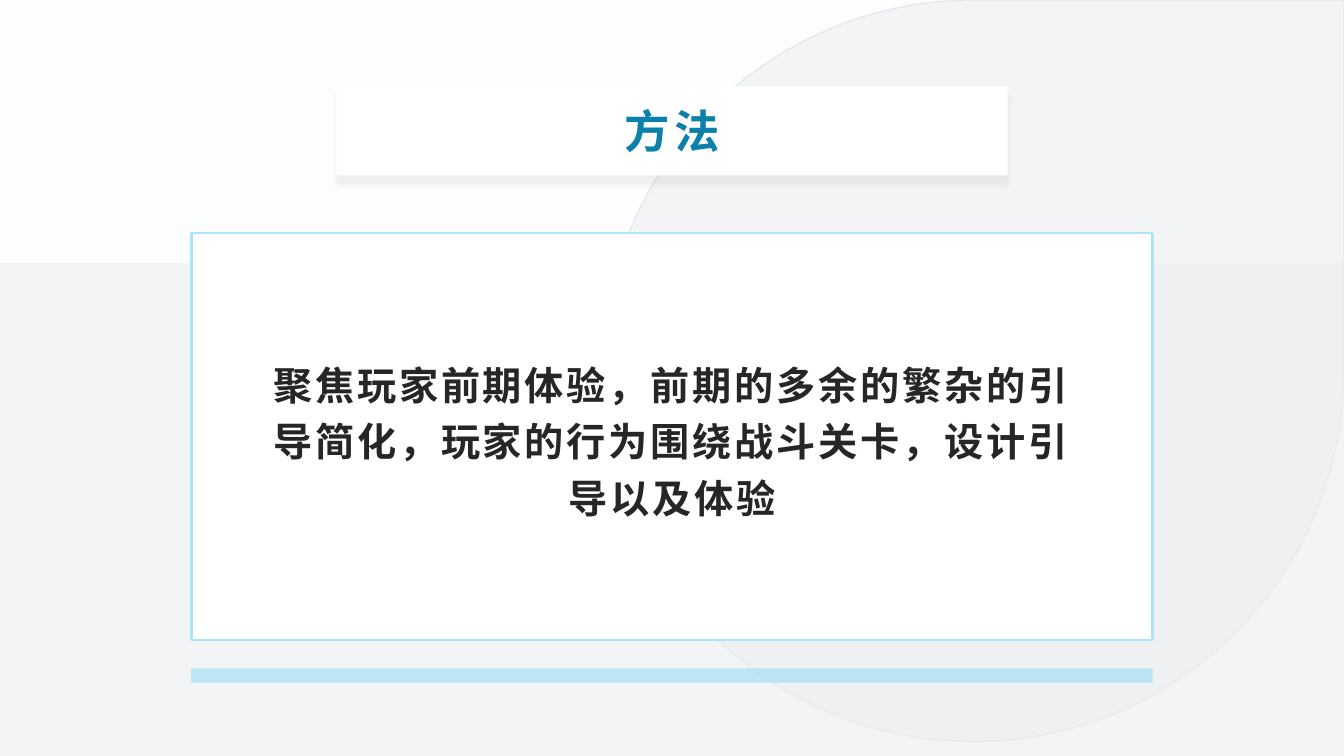
from lxml import etree
from pptx import Presentation
from pptx import util as u
from pptx.dml.color import RGBColor
from pptx.enum import shapes, text
from pptx.oxml.ns import qn

# Content
TITLE = "方法"
BODY = "聚焦玩家前期体验，前期的多余的繁杂的引导简化，玩家的行为围绕战斗关卡，设计引导以及体验"

# Colours and font
PAPER = RGBColor(0xFC, 0xFD, 0xFD)
WHITE = RGBColor(0xFF, 0xFF, 0xFF)
GREY = RGBColor(0xEC, 0xEE, 0xEF)
STEEL = RGBColor(0x57, 0x9D, 0xB6)
SKY = RGBColor(0x76, 0xD4, 0xF6)
PALE = RGBColor(0xAD, 0xE5, 0xFA)
TEAL = RGBColor(0x0B, 0x80, 0xAB)
INK = RGBColor(0x26, 0x26, 0x26)
FONT = "Noto Sans CJK SC"

# Layout in cm; panels and labels are centred across the slide
WIDE, HIGH = 33.87, 19.05
DROP = 18.69
BAND = 6.63
PANEL = 24.23
RECT = shapes.MSO_SHAPE.RECTANGLE
TEAR = shapes.MSO_SHAPE.TEAR


def mid(top, width, height):
    return (WIDE - width) / 2, top, width, height


# Kind, place, fill, fill opacity %, line (colour, points, opacity %), shadow
SHAPES = [
    (TEAR, (WIDE - DROP, 0, DROP, DROP), GREY, 54, (STEEL, 1, 12), False),
    (RECT, (0, BAND, WIDE, HIGH - BAND), GREY, 54, None, False),
    (RECT, mid(16.84, PANEL, 0.36), SKY, 43, None, False),
    (RECT, mid(2.18, 16.92, 2.24), WHITE, 100, None, True),
    (RECT, mid(5.87, PANEL, 10.26), WHITE, 100, (PALE, 2, 100), False),
]

# Text, place, letter spacing in points, font format, paragraph format
LABELS = [
    (TITLE, mid(2.41, 15.75, 1.75), 3,
     {"size": u.Pt(32.4)}, TEAL, {}),
    (BODY, mid(8, 21.31, 5.99), 2,
     {"size": u.Pt(28)}, INK, {"line_spacing": 1.2, "space_after": u.Pt(8)}),
]


def put(item, values):
    for name, value in values.items():
        setattr(item, name, value)


def fade(fill, color, alpha):
    fill.solid()
    fill.fore_color.rgb = color
    if alpha < 100:
        tint = fill._xPr.find(".//" + qn("a:srgbClr"))
        etree.SubElement(tint, qn("a:alpha"), val=str(alpha * 1000))


def shade(shape):
    effects = shape._element.spPr.find(qn("a:effectLst"))
    cast = etree.SubElement(
        effects, qn("a:outerShdw"), blurRad=str(u.Pt(4)),
        dist=str(u.Pt(6)), dir="5400000", algn="t", rotWithShape="0")
    tint = etree.SubElement(cast, qn("a:srgbClr"), val="0D0D0D")
    etree.SubElement(tint, qn("a:alpha"), val="6000")


deck = Presentation()
put(deck, {"slide_width": u.Cm(WIDE), "slide_height": u.Cm(HIGH)})
slide = deck.slides.add_slide(deck.slide_layouts[6])
fade(slide.background.fill, PAPER, 100)

# Backdrop and panels
for kind, place, color, alpha, edge, cast in SHAPES:
    shape = slide.shapes.add_shape(kind, *map(u.Cm, place))
    shape.shadow.inherit = False
    fade(shape.fill, color, alpha)
    if edge:
        shape.line.width = u.Pt(edge[1])
        fade(shape.line.fill, edge[0], edge[2])
    else:
        shape.line.fill.background()
    if cast:
        shade(shape)

# Title and body
for words, place, gap, look, color, flow in LABELS:
    frame = slide.shapes.add_textbox(*map(u.Cm, place)).text_frame
    put(frame, {"word_wrap": True, "vertical_anchor": text.MSO_ANCHOR.MIDDLE})
    para = frame.paragraphs[0]
    put(para, {"alignment": text.PP_ALIGN.CENTER, **flow})
    run = para.add_run()
    run.text = words
    put(run.font, {"name": FONT, "bold": True, **look})
    run.font.color.rgb = color
    props = run.font._element
    props.set("spc", str(gap * 100))
    props.set("lang", "zh-CN")
    etree.SubElement(props, qn("a:ea"), typeface=FONT)

deck.save("out.pptx")
